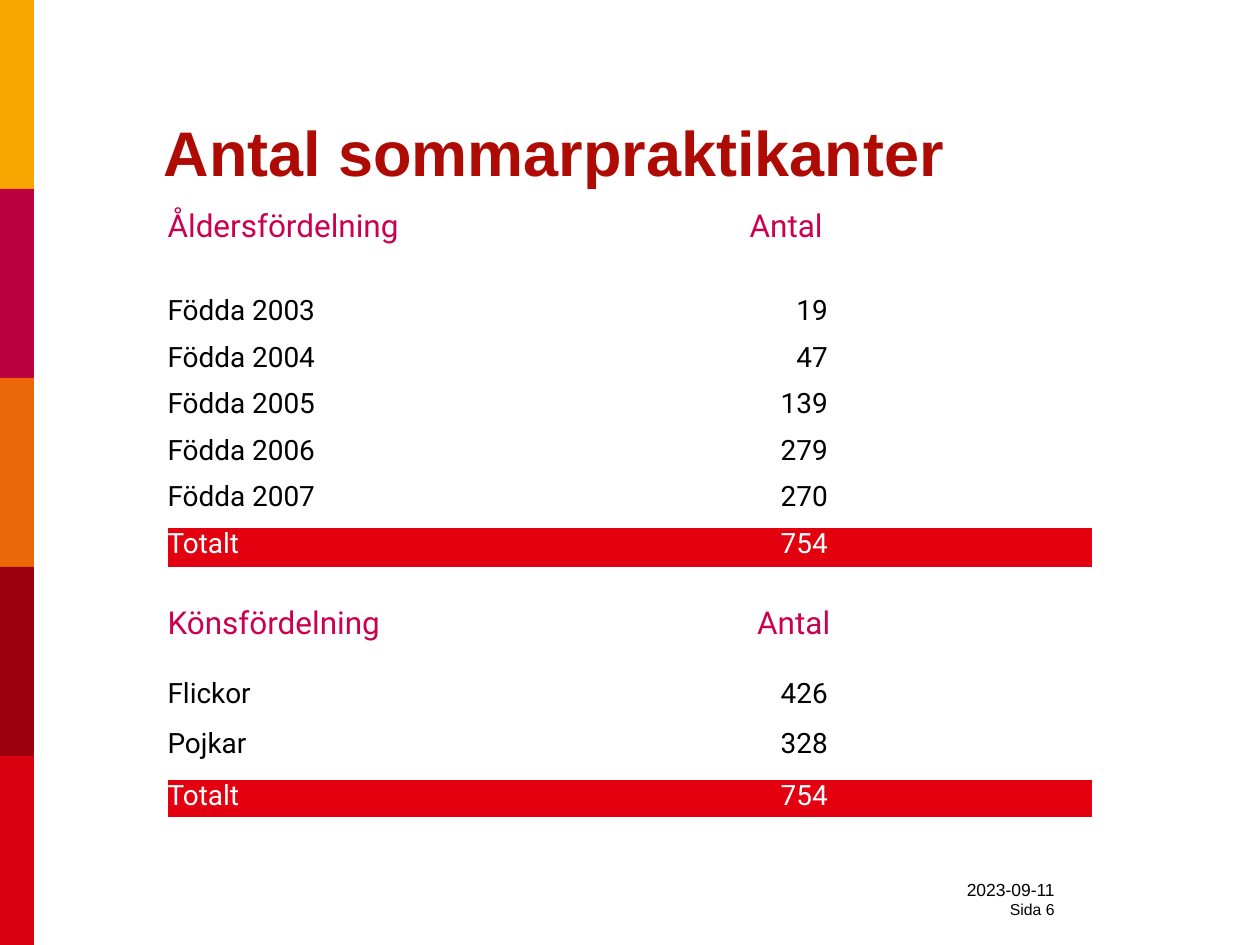
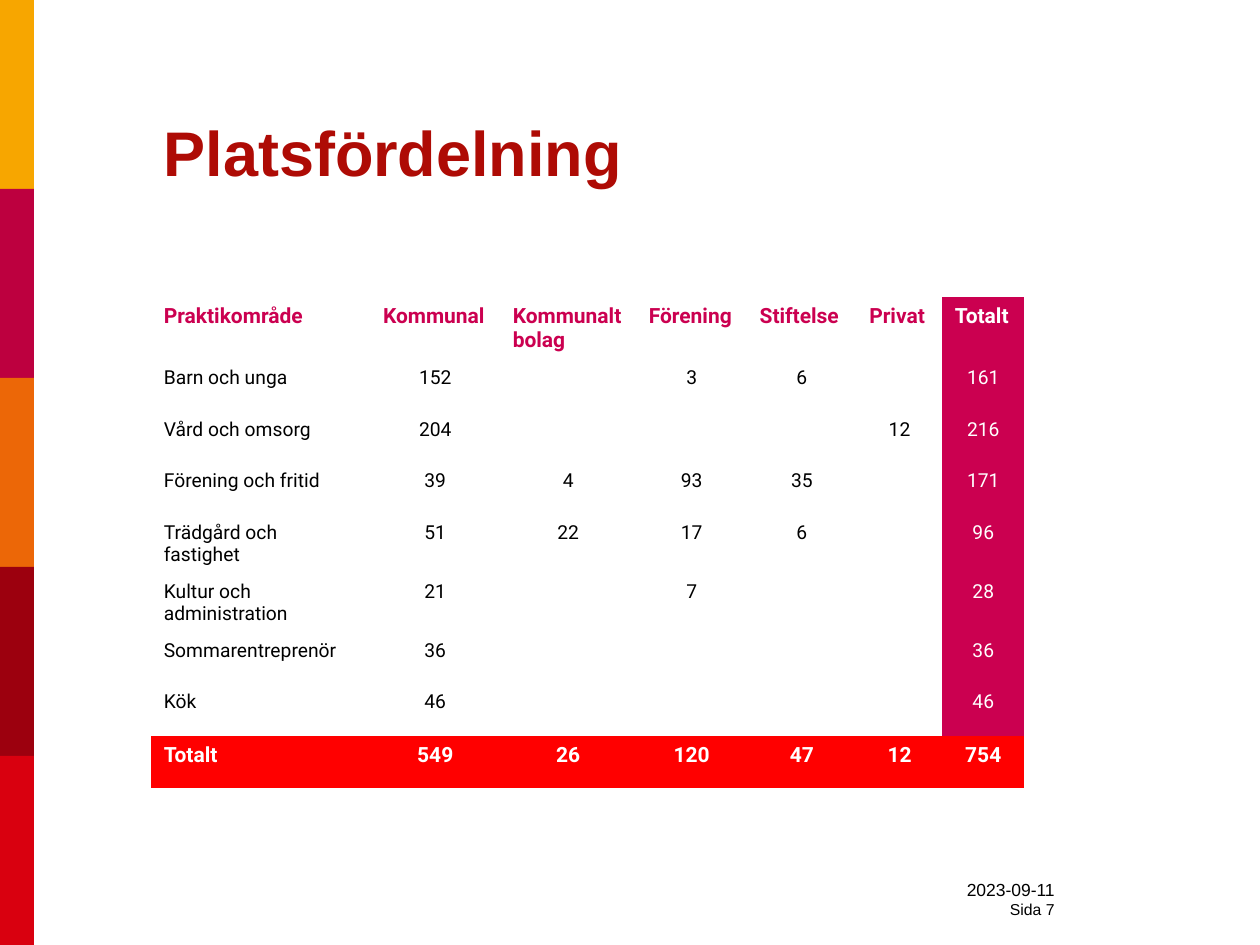
from pptx import Presentation
from pptx.dml.color import RGBColor
from pptx.enum.shapes import MSO_SHAPE
from pptx.enum.text import MSO_ANCHOR, PP_ALIGN
from pptx.util import Inches, Pt

BLACK = RGBColor(0x00, 0x00, 0x00)
WHITE = RGBColor(0xFF, 0xFF, 0xFF)
TITLE_RED = RGBColor(0xAE, 0x0B, 0x05)
MAGENTA = RGBColor(0xCB, 0x00, 0x50)
TOTAL_RED = RGBColor(0xE3, 0x00, 0x0F)
BRIGHT_RED = RGBColor(0xFF, 0x00, 0x00)
BAND_COLORS = [
    RGBColor(0xF7, 0xA6, 0x00), RGBColor(0xBD, 0x00, 0x3F),
    RGBColor(0xEC, 0x67, 0x07), RGBColor(0x9C, 0x00, 0x0E),
    RGBColor(0xD9, 0x00, 0x0F),
]
TITLE_FONT, TABLE_FONT = "Arial", "Roboto"
PLAIN_TABLE = "{2D5ABB26-0587-4C30-8999-92F81FD0307C}"
LEFT, CENTER, RIGHT = PP_ALIGN.LEFT, PP_ALIGN.CENTER, PP_ALIGN.RIGHT


def write(p, text, size, color, font=TABLE_FONT, bold=False, align=LEFT):
    p.alignment = align
    r = p.add_run()
    r.text = text
    r.font.name, r.font.size, r.font.bold = font, Pt(size), bold
    r.font.color.rgb = color


def add_text_box(s, x, y, w, h, anchor):
    tf = s.shapes.add_textbox(Inches(x), Inches(y), Inches(w), Inches(h)).text_frame
    tf.word_wrap = True
    tf.vertical_anchor = anchor
    return tf


def add_bands(s, x, y, w, h):
    band_h = h / len(BAND_COLORS)
    for i, color in enumerate(BAND_COLORS):
        sp = s.shapes.add_shape(MSO_SHAPE.RECTANGLE, Inches(x), Inches(y + i * band_h),
                                Inches(w), Inches(band_h))
        sp.shadow.inherit = False
        sp.fill.solid()
        sp.fill.fore_color.rgb = color
        sp.line.fill.background()


def add_footer(s, x, y, w, h, page):
    tf = add_text_box(s, x, y, w, h, MSO_ANCHOR.MIDDLE)
    tf.margin_left = tf.margin_right = 0
    write(tf.paragraphs[0], "2023-09-11", 10, BLACK, TITLE_FONT, align=RIGHT)
    write(tf.add_paragraph(), f"Sida {page}", 9, BLACK, TITLE_FONT, align=RIGHT)


def add_base_slide(prs, title, page):
    s = prs.slides.add_slide(prs.slide_layouts[6])
    add_footer(s, 7.33, 6.95, 1.04, 0.37, page)
    add_bands(s, 0, 0, 0.27, 7.5)
    tf = add_text_box(s, 1.2, 0.3, 8.65, 1.25, MSO_ANCHOR.BOTTOM)
    write(tf.paragraphs[0], title, 36, TITLE_RED, TITLE_FONT, bold=True)
    return s


def add_plain_table(s, x, y, col_widths, row_heights):
    table = s.shapes.add_table(len(row_heights), len(col_widths), Inches(x), Inches(y),
                               Inches(sum(col_widths)), Inches(sum(row_heights))).table
    # Style without bands or grid
    table.first_row = table.horz_banding = False
    table._tbl.tblPr[0].text = PLAIN_TABLE
    for column, width in zip(table.columns, col_widths):
        column.width = Inches(width)
    for row, height in zip(table.rows, row_heights):
        row.height = Inches(height)
    return table


def fill_cell(cell, color=None):
    if color is None:
        cell.fill.background()
    else:
        cell.fill.solid()
        cell.fill.fore_color.rgb = color


def add_count_table(s, x, y):
    """Two stacked lists of label and count, each with a heading and a total."""
    rows = [
        ("Åldersfördelning", "Antal", 0.69),
        ("Födda 2003", "19", 0.37),
        ("Födda 2004", "47", 0.37),
        ("Födda 2005", "139", 0.37),
        ("Födda 2006", "279", 0.37),
        ("Födda 2007", "270", 0.37),
        ("Totalt", "754", 0.31),
        ("", "", 0.31),
        ("Könsfördelning", "Antal", 0.57),
        ("Flickor", "426", 0.4),
        ("Pojkar", "328", 0.41),
        ("Totalt", "754", 0.3),
    ]
    table = add_plain_table(s, x, y, [4.62, 0.62, 2.1], [row[2] for row in rows])
    for i, (label, count, _) in enumerate(rows):
        is_heading, is_total = count == "Antal", label == "Totalt"
        for cell in table.rows[i].cells:
            cell.margin_left = cell.margin_right = 0
            cell.margin_top = cell.margin_bottom = 0
            fill_cell(cell, TOTAL_RED if is_total else None)
        label_cell, count_cell = table.cell(i, 0), table.cell(i, 1)
        if is_heading or not label:
            count_cell.merge(table.cell(i, 2))
        if not label:
            continue
        size = 18 if is_heading else 16
        color = MAGENTA if is_heading else WHITE if is_total else BLACK
        write(label_cell.text_frame.paragraphs[0], label, size, color)
        write(count_cell.text_frame.paragraphs[0], count, size, color,
              align=LEFT if is_heading else RIGHT)
        # The lower heading is set in slightly
        if label == "Könsfördelning":
            count_cell.margin_left = Inches(0.06)


def add_placement_table(s, x, y):
    """Placements per field and type of employer, with totals both ways."""
    rows = [
        ["Praktikområde", "Kommunal", "Kommunalt bolag", "Förening", "Stiftelse",
         "Privat", "Totalt"],
        ["Barn och unga", 152, "", 3, 6, "", 161],
        ["Vård och omsorg", 204, "", "", "", 12, 216],
        ["Förening och fritid", 39, 4, 93, 35, "", 171],
        ["Trädgård och fastighet", 51, 22, 17, 6, "", 96],
        ["Kultur och administration", 21, "", 7, "", "", 28],
        ["Sommarentreprenör", 36, "", "", "", "", 36],
        ["Kök", 46, "", "", "", "", 46],
        ["Totalt", 549, 26, 120, 47, 12, 754],
    ]
    heights = [0.48] + [0.41] * 4 + [0.45] + [0.41] * 3
    table = add_plain_table(s, x, y, [1.74, 1.03, 1.08, 0.88, 0.87, 0.68, 0.65], heights)
    last_row, last_col = len(rows) - 1, len(rows[0]) - 1
    for i, row in enumerate(rows):
        for j, value in enumerate(row):
            cell = table.cell(i, j)
            if i == last_row:
                fill, color = BRIGHT_RED, WHITE
            elif j == last_col:
                fill, color = MAGENTA, WHITE
            else:
                fill, color = None, MAGENTA if i == 0 else BLACK
            fill_cell(cell, fill)
            if value != "":
                bold = i in (0, last_row)
                write(cell.text_frame.paragraphs[0], str(value), 12 if bold else 11, color,
                      bold=bold, align=LEFT if i == 0 or j == 0 else CENTER)


def main():
    prs = Presentation()
    prs.slide_width, prs.slide_height = Inches(10), Inches(7.5)
    add_count_table(add_base_slide(prs, "Antal sommarpraktikanter", 6), 1.33, 1.65)
    add_placement_table(add_base_slide(prs, "Platsfördelning", 7), 1.2, 2.36)
    prs.save("out.pptx")


if __name__ == "__main__":
    main()
